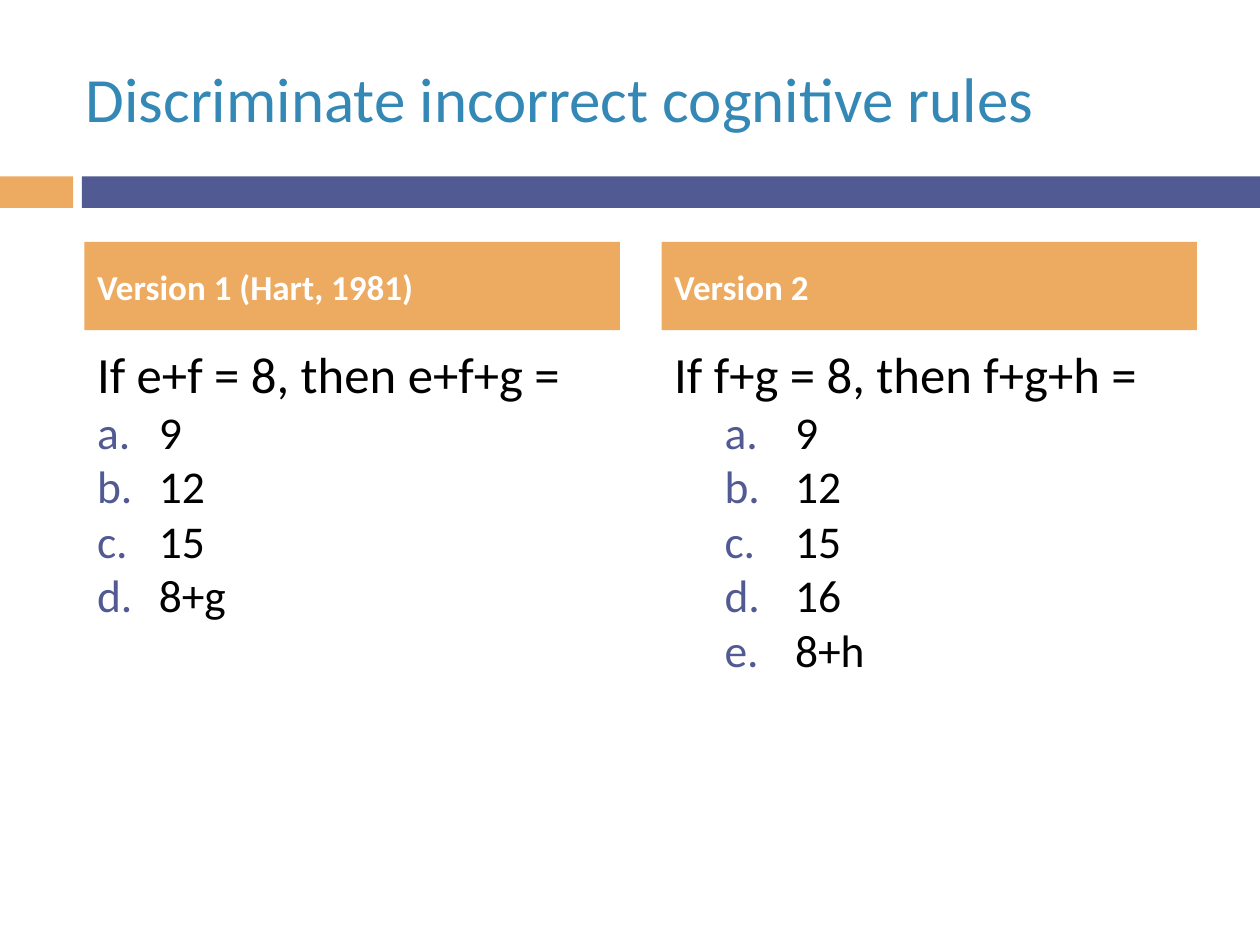
from pptx import Presentation
from pptx.dml.color import RGBColor
from pptx.enum.shapes import MSO_SHAPE
from pptx.enum.text import MSO_ANCHOR, MSO_AUTO_SIZE, PP_ALIGN
from pptx.oxml.ns import qn
from pptx.util import Inches, Pt
from lxml.etree import SubElement

TITLE = "Discriminate incorrect cognitive rules"
COLUMNS = [
    {"head": "Version 1 (Hart, 1981)", "ask": "If e+f = 8, then e+f+g = ",
     "picks": ["9", "12", "15", "8+g"], "left": 0.49, "hang": 0.49},
    {"head": "Version 2", "ask": "If f+g = 8, then f+g+h = ",
     "picks": ["9", "12", "15", "16", "8+h"], "left": 0.96, "hang": 0.56},
]
THEME = {
    "font": "Calibri", "title": "3488B6", "accent": "EDAA61", "main": "525A93",
    "text": "000000", "light": "FFFFFF",
    "title_size": 36, "ask_size": 29, "pick_size": 26, "head_size": 20,
}
BARS = [(0, 0.58, "accent"), (0.65, 9.35, "main")]
START, WIDTH, STEP = 0.67, 4.25, 4.58


def paint(shape, color):
    shape.fill.solid()
    shape.fill.fore_color.rgb = RGBColor.from_string(THEME[color])


def place(shape, left, top, width, height, anchor=MSO_ANCHOR.MIDDLE):
    shape.left, shape.top = Inches(left), Inches(top)
    shape.width, shape.height = Inches(width), Inches(height)
    frame = shape.text_frame
    frame.word_wrap = True
    frame.auto_size = MSO_AUTO_SIZE.NONE
    frame.vertical_anchor = anchor
    return frame


def write(para, text, size, color="text", bold=False, level=0,
          left=0, hang=0, number=False):
    para.level = level
    para.alignment = PP_ALIGN.LEFT
    para.space_before = Pt(0)
    run = para.add_run()
    run.text = text
    font = run.font
    font.name, font.size, font.bold = THEME["font"], Pt(THEME[size]), bold
    font.color.rgb = RGBColor.from_string(THEME[color])
    props = para._p.get_or_add_pPr()
    props.set("marL", str(Inches(left)))
    props.set("indent", str(-Inches(hang)))
    if number:
        tint = SubElement(props, qn("a:buClr"))
        SubElement(tint, qn("a:srgbClr"), val=THEME["main"])
        SubElement(props, qn("a:buFont"), typeface=THEME["font"])
        SubElement(props, qn("a:buAutoNum"), type="alphaLcPeriod")
    else:
        SubElement(props, qn("a:buNone"))


def main():
    deck = Presentation()
    deck.slide_width, deck.slide_height = Inches(10), Inches(7.5)
    slide = deck.slides.add_slide(deck.slide_layouts.get_by_name("Comparison"))
    title, *slots = slide.placeholders

    for left, width, color in BARS:
        bar = slide.shapes.add_shape(MSO_SHAPE.RECTANGLE, Inches(left),
                                     Inches(1.4), Inches(width), Inches(0.25))
        bar.shadow.inherit = False
        bar.line.fill.background()
        paint(bar, color)

    frame = place(title, 0.58, 0.3, 8.92, 0.95)
    write(frame.paragraphs[0], TITLE, "title_size", color="title")

    for i, col in enumerate(COLUMNS):
        head, body = slots[2 * i:2 * i + 2]
        left = START + i * STEP
        frame = place(head, left, 1.92, WIDTH, 0.7)
        paint(head, "accent")
        write(frame.paragraphs[0], col["head"], "head_size",
              color="light", bold=True)
        frame = place(body, left, 2.67, WIDTH, 3.92, anchor=MSO_ANCHOR.TOP)
        write(frame.paragraphs[0], col["ask"], "ask_size")
        for pick in col["picks"]:
            write(frame.add_paragraph(), pick, "pick_size", level=1,
                  left=col["left"], hang=col["hang"], number=True)

    deck.save("out.pptx")


if __name__ == "__main__":
    main()
